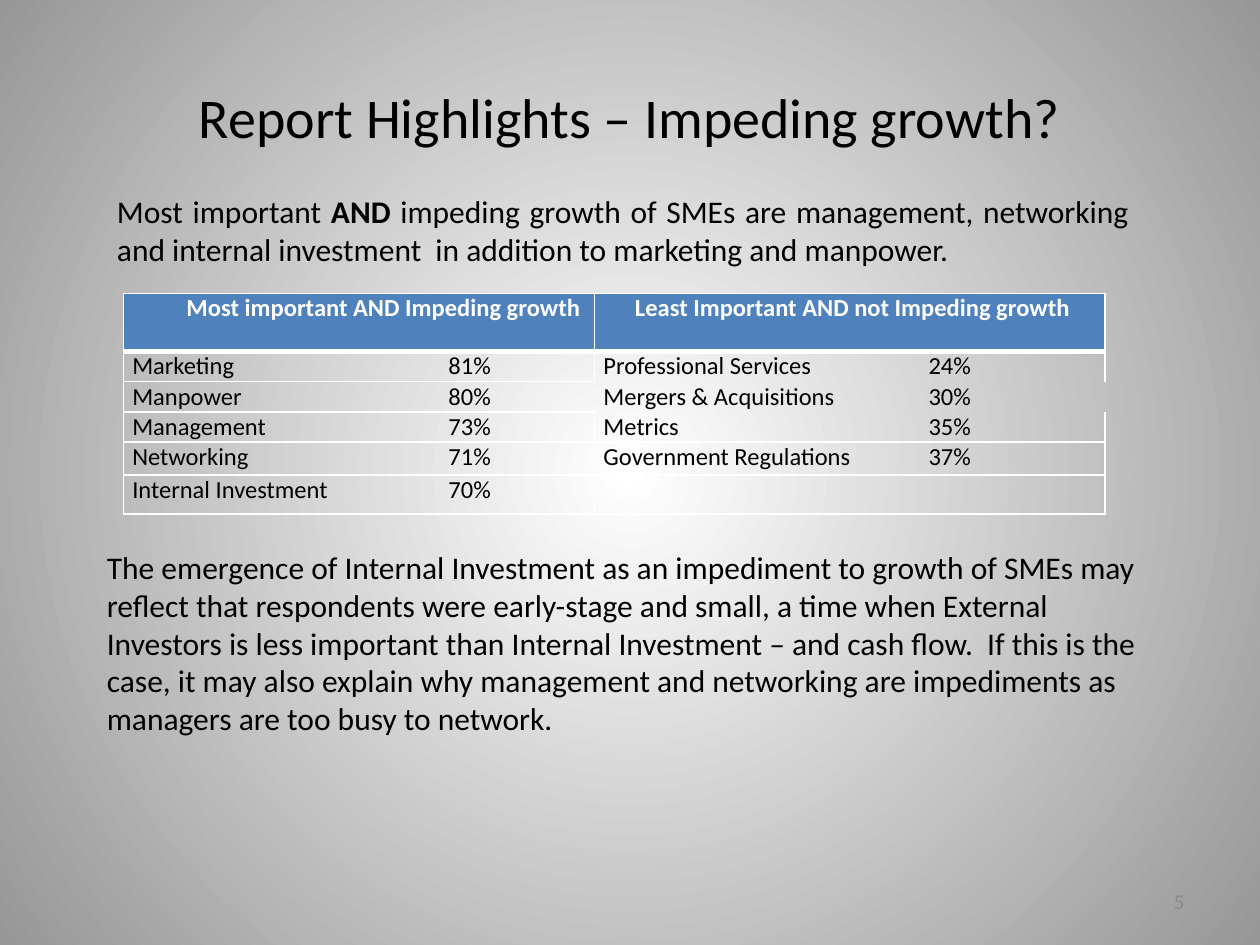
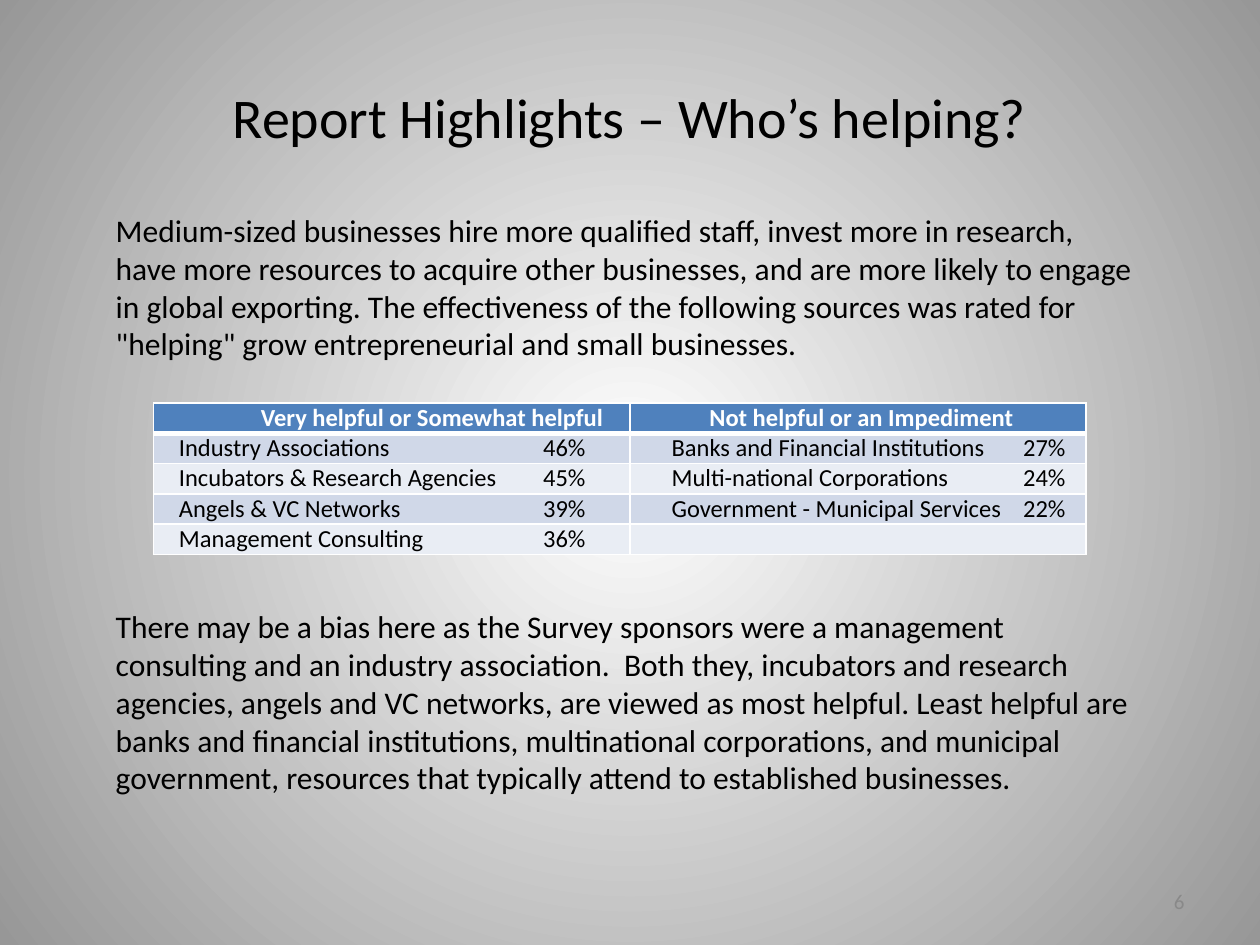
from lxml import etree
from pptx import Presentation
from pptx.dml.color import RGBColor
from pptx.enum.text import MSO_ANCHOR, PP_ALIGN
from pptx.oxml.ns import qn
from pptx.util import Inches, Pt

BLACK = RGBColor(0x00, 0x00, 0x00)
WHITE = RGBColor(0xFF, 0xFF, 0xFF)
EDGE_GREY = RGBColor(0x97, 0x97, 0x97)
NUMBER_GREY = RGBColor(0x89, 0x89, 0x89)
HEADER_BLUE = RGBColor(0x4F, 0x81, 0xBD)
BAND_DARK = RGBColor(0xD0, 0xD8, 0xE8)
BAND_LIGHT = RGBColor(0xE9, 0xED, 0xF4)

LEFT, CENTER, RIGHT, JUSTIFY = PP_ALIGN.LEFT, PP_ALIGN.CENTER, PP_ALIGN.RIGHT, PP_ALIGN.JUSTIFY
TOP, MIDDLE = MSO_ANCHOR.TOP, MSO_ANCHOR.MIDDLE

FONT = "Calibri"
BLANK_LAYOUT = 6
CELL_MARGIN = 0.07


class Deck:
    def __init__(self):
        self.presentation = Presentation()
        self.presentation.slide_width = Inches(10)
        self.presentation.slide_height = Inches(7.5)
        self.slide = None
        self.paint_background()

    def paint_background(self):
        master = self.presentation.slide_master
        fill = master.background.fill
        fill.gradient()
        for stop, color, position in zip(fill.gradient_stops, (WHITE, EDGE_GREY), (0, 1)):
            stop.color.rgb = color
            stop.position = position
        gradient = master.element.xpath(".//p:bg//a:gradFill")[0]
        gradient.remove(gradient.find(qn("a:lin")))
        circle = etree.SubElement(gradient, qn("a:path"), path="circle")
        etree.SubElement(circle, qn("a:fillToRect"), l="50000", t="50000", r="50000", b="50000")

    def add_slide(self, title, number):
        layout = self.presentation.slide_layouts[BLANK_LAYOUT]
        self.slide = self.presentation.slides.add_slide(layout)
        self.add_text((0.5, 0.3, 9, 1.25), [title], size=32, align=CENTER, anchor=MIDDLE)
        self.add_text((7.17, 6.95, 2.33, 0.4), [number], size=12, color=NUMBER_GREY,
                      align=RIGHT, anchor=MIDDLE)

    def style(self, paragraph, size, color, bold=None):
        font = paragraph.font
        font.name = FONT
        font.size = Pt(size)
        font.color.rgb = color
        font.bold = bold

    def add_text(self, box, runs, size=18, color=BLACK, align=LEFT, anchor=TOP, bold_run=None):
        frame = self.slide.shapes.add_textbox(*map(Inches, box)).text_frame
        frame.word_wrap = True
        frame.vertical_anchor = anchor
        paragraph = frame.paragraphs[0]
        paragraph.alignment = align
        self.style(paragraph, size, color)
        for index, text in enumerate(runs):
            run = paragraph.add_run()
            run.text = text
            if index == bold_run:
                run.font.bold = True
        return paragraph

    def add_table(self, left, top, widths, heights, headers, header_indents,
                  rows, indents, tabs, bands, open_sides):
        shape = self.slide.shapes.add_table(len(heights), len(widths), Inches(left), Inches(top),
                                            Inches(sum(widths)), Inches(sum(heights)))
        table = shape.table
        for column, width in zip(table.columns, widths):
            column.width = Inches(width)
        for row, height in zip(table.rows, heights):
            row.height = Inches(height)
        for column, (text, indent) in enumerate(zip(headers, header_indents)):
            cell = table.cell(0, column)
            self.set_borders(cell, bottom=3)
            self.fill_cell(cell, text, indent, HEADER_BLUE, WHITE, True)
        for row, texts in enumerate(rows, 1):
            for column, text in enumerate(texts):
                cell = table.cell(row, column)
                self.set_borders(cell, open_sides=open_sides.get((row, column), ""))
                band = bands[(row - 1) % len(bands)]
                self.fill_cell(cell, text, indents[column], band, BLACK, False, tabs[column])

    def set_borders(self, cell, bottom=1, open_sides=""):
        properties = cell._tc.get_or_add_tcPr()
        for side in "LRTB":
            width = Pt(bottom if side == "B" else 1)
            line = etree.SubElement(properties, qn(f"a:ln{side}"), w=str(width))
            if side in open_sides:
                etree.SubElement(line, qn("a:noFill"))
            else:
                solid = etree.SubElement(line, qn("a:solidFill"))
                etree.SubElement(solid, qn("a:srgbClr"), val=str(WHITE))

    def fill_cell(self, cell, text, indent, fill, color, bold, tab=None):
        cell.margin_left = Inches(CELL_MARGIN + indent)
        cell.margin_right = Inches(CELL_MARGIN)
        cell.margin_top = cell.margin_bottom = 0
        if fill is None:
            cell.fill.background()
        else:
            cell.fill.solid()
            cell.fill.fore_color.rgb = fill
        paragraph = cell.text_frame.paragraphs[0]
        if text:
            paragraph.text = text
        if tab:
            properties = paragraph._p.get_or_add_pPr()
            stops = etree.SubElement(properties, qn("a:tabLst"))
            etree.SubElement(stops, qn("a:tab"), pos=str(Inches(tab)), algn="l")
        self.style(paragraph, 14, color, bold)


def add_impeding_growth(deck):
    deck.add_slide("Report Highlights – Impeding growth?", "5")
    deck.add_table(
        0.98, 2.33, [3.74, 4.05], [0.46, 0.24, 0.24, 0.24, 0.26, 0.31],
        headers=["Most important AND Impeding growth", "Least Important AND not Impeding growth"],
        header_indents=[0.43, 0.25],
        rows=[
            ("Marketing\t81%", "Professional Services\t24%"),
            ("Manpower\t80%", "Mergers & Acquisitions\t30%"),
            ("Management\t73%", "Metrics\t35%"),
            ("Networking\t71%", "Government Regulations\t37%"),
            ("Internal Investment\t70%", ""),
        ],
        indents=[0, 0], tabs=[2.51, 2.58], bands=[None],
        open_sides={(1, 1): "B", (2, 0): "R", (2, 1): "LRTB", (3, 1): "T"})
    introduction = deck.add_text(
        (0.83, 1.47, 8.23, 0.71),
        ["Most important ", "AND ",
         "impeding growth of SMEs are management, networking and internal investment  "
         "in addition to marketing and manpower."],
        align=JUSTIFY, anchor=MIDDLE, bold_run=1)
    introduction.space_after = Pt(6)
    deck.add_text(
        (0.75, 4.3, 8.43, 1.62),
        ["The emergence of Internal Investment as an impediment to growth of SMEs may reflect "
         "that respondents were early-stage and small, a time when External Investors is less "
         "important than Internal Investment – and cash flow.  If this is the case, it may also "
         "explain why management and networking are impediments as managers are too busy to "
         "network."])


def add_who_is_helping(deck):
    deck.add_slide("Report Highlights – Who’s helping?", "6")
    deck.add_table(
        1.22, 3.2, [3.78, 3.62], [0.24] * 5,
        headers=["Very helpful or Somewhat helpful", "Not helpful or an Impediment"],
        header_indents=[0.78, 0.56],
        rows=[
            ("Industry Associations\t46%", "Banks and Financial Institutions\t27%"),
            ("Incubators & Research Agencies\t45%", "Multi-national Corporations\t24%"),
            ("Angels & VC Networks\t39%", "Government - Municipal Services\t22%"),
            ("Management Consulting\t36%", ""),
        ],
        indents=[0.13, 0.26], tabs=[2.89, 2.79], bands=[BAND_DARK, BAND_LIGHT], open_sides={})
    deck.add_text(
        (0.82, 1.62, 8.31, 1.31),
        ["Medium-sized businesses hire more qualified staff, invest more in research, have more "
         "resources to acquire other businesses, and are more likely to engage in global "
         "exporting. The effectiveness of the following sources was rated for \"helping\" grow "
         "entrepreneurial and small businesses."],
        anchor=MIDDLE)
    deck.add_text(
        (0.82, 4.77, 8.31, 1.62),
        ["There may be a bias here as the Survey sponsors were a management consulting and an "
         "industry association.  Both they, incubators and research agencies, angels and VC "
         "networks, are viewed as most helpful. Least helpful are banks and financial "
         "institutions, multinational corporations, and municipal government, resources that "
         "typically attend to established businesses."])


def main():
    deck = Deck()
    add_impeding_growth(deck)
    add_who_is_helping(deck)
    deck.presentation.save("out.pptx")


if __name__ == "__main__":
    main()
